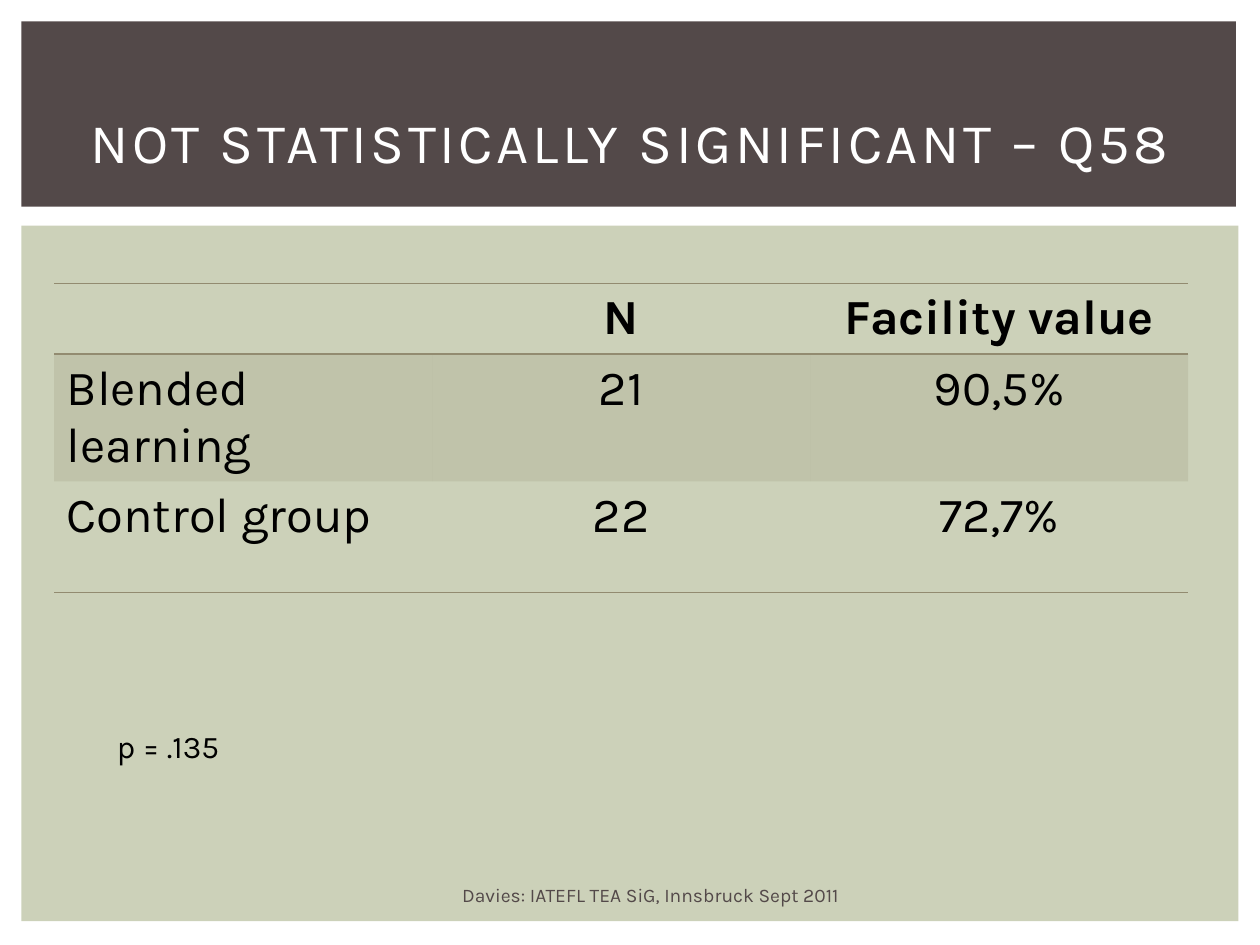
from lxml.etree import SubElement
from pptx import Presentation
from pptx.dml.color import RGBColor
from pptx.enum.shapes import MSO_SHAPE as Shape
from pptx.enum.text import MSO_ANCHOR as Anchor, PP_ALIGN as Align
from pptx.oxml.ns import qn
from pptx.util import Inches, Pt

FONT = "Karla"
BLACK = RGBColor(0, 0, 0)
WHITE = RGBColor(0xFF, 0xFF, 0xFF)
SAGE = RGBColor(0xCC, 0xD1, 0xB9)
BROWN = RGBColor(0x53, 0x49, 0x49)
OLIVE = RGBColor(0x92, 0x8B, 0x70)
NO_STYLE_NO_GRID = "{2D5ABB26-0587-4C30-8999-92F81FD0307C}"

RESULTS = [
    ("", "N", "Facility value"),
    ("Blended learning", "21", "90,5%"),
    ("Control group", "22", "72,7%"),
]
ROW_HEIGHTS = (0.56, 1.01, 0.88)
RULED_SIDES = (("lnT", "lnB"), (), ("lnB",))


def write(frame, text, size, color, align=Align.LEFT, bold=False):
    frame.text = text
    paragraph = frame.paragraphs[0]
    paragraph.alignment = align
    font = paragraph.font if not paragraph.runs else paragraph.runs[0].font
    font.name, font.size, font.bold = FONT, Pt(size), bold
    font.color.rgb = color


def add_panel(slide, left, top, width, height, color):
    panel = slide.shapes.add_shape(Shape.RECTANGLE, left, top, width, height)
    panel.shadow.inherit = False
    panel.fill.solid()
    panel.fill.fore_color.rgb = color
    panel.line.fill.background()


def add_label(slide, left, top, width, height, text, size, color,
              align=Align.LEFT, anchor=Anchor.TOP):
    frame = slide.shapes.add_textbox(left, top, width, height).text_frame
    frame.word_wrap = True
    frame.vertical_anchor = anchor
    write(frame, text, size, color, align)


def place_title(slide, left, top, width, height, text):
    """Format the title placeholder and bring it in front of the panels."""
    title = slide.shapes.title
    title.left, title.top, title.width, title.height = left, top, width, height
    title.text_frame.word_wrap = True
    title.text_frame.vertical_anchor = Anchor.MIDDLE
    write(title.text_frame, text, 32, WHITE, Align.CENTER)
    title.text_frame.paragraphs[0].runs[0].font._element.set("spc", "200")
    slide.shapes[-1].element.addnext(title.element)


def rule_cell(cell, sides):
    properties = cell._tc.get_or_add_tcPr()
    for side in sides:
        line = SubElement(properties, qn(f"a:{side}"), w=str(Pt(1)))
        fill = SubElement(line, qn("a:solidFill"))
        SubElement(fill, qn("a:srgbClr"), val=str(OLIVE))


def shade_cell(cell, percent):
    cell.fill.solid()
    cell.fill.fore_color.rgb = OLIVE
    color = cell._tc.tcPr.find(qn("a:solidFill")).find(qn("a:srgbClr"))
    SubElement(color, qn("a:alpha"), val=str(percent * 1000))


def add_results(slide, left, top, width):
    frame = slide.shapes.add_table(len(RESULTS), len(RESULTS[0]), left, top,
                                   width, Inches(sum(ROW_HEIGHTS)))
    table = frame.table
    table.horz_banding = False
    table._tbl.tblPr.find(qn("a:tableStyleId")).text = NO_STYLE_NO_GRID
    for r, values in enumerate(RESULTS):
        table.rows[r].height = Inches(ROW_HEIGHTS[r])
        for c, value in enumerate(values):
            cell = table.cell(r, c)
            align = Align.CENTER if c else Align.LEFT
            write(cell.text_frame, value, 28, BLACK, align, bold=r == 0)
            rule_cell(cell, RULED_SIDES[r])
            if r == 1:
                shade_cell(cell, 20)
            else:
                cell.fill.background()


def main():
    deck = Presentation()
    deck.slide_width, deck.slide_height = Inches(10), Inches(7.5)
    slide = deck.slides.add_slide(deck.slide_layouts[5])

    add_panel(slide, Inches(0.17), Inches(1.79), Inches(9.66), Inches(5.52), SAGE)
    add_panel(slide, Inches(0.17), Inches(0.17), Inches(9.64), Inches(1.47), BROWN)
    add_results(slide, Inches(0.43), Inches(2.25), Inches(9))
    add_label(slide, Inches(3.33), Inches(6.95), Inches(3.67), Inches(0.3),
              "Davies: IATEFL TEA SiG, Innsbruck Sept 2011", 11, BROWN,
              Align.CENTER, Anchor.MIDDLE)
    place_title(slide, Inches(0.5), Inches(0.3), Inches(9), Inches(1.64),
                "NOT STATISTICALLY SIGNIFICANT – Q58")
    add_label(slide, Inches(0.83), Inches(5.72), Inches(3.46), Inches(0.4),
              "p = .135", 18, BLACK)
    deck.save("out.pptx")


if __name__ == "__main__":
    main()
